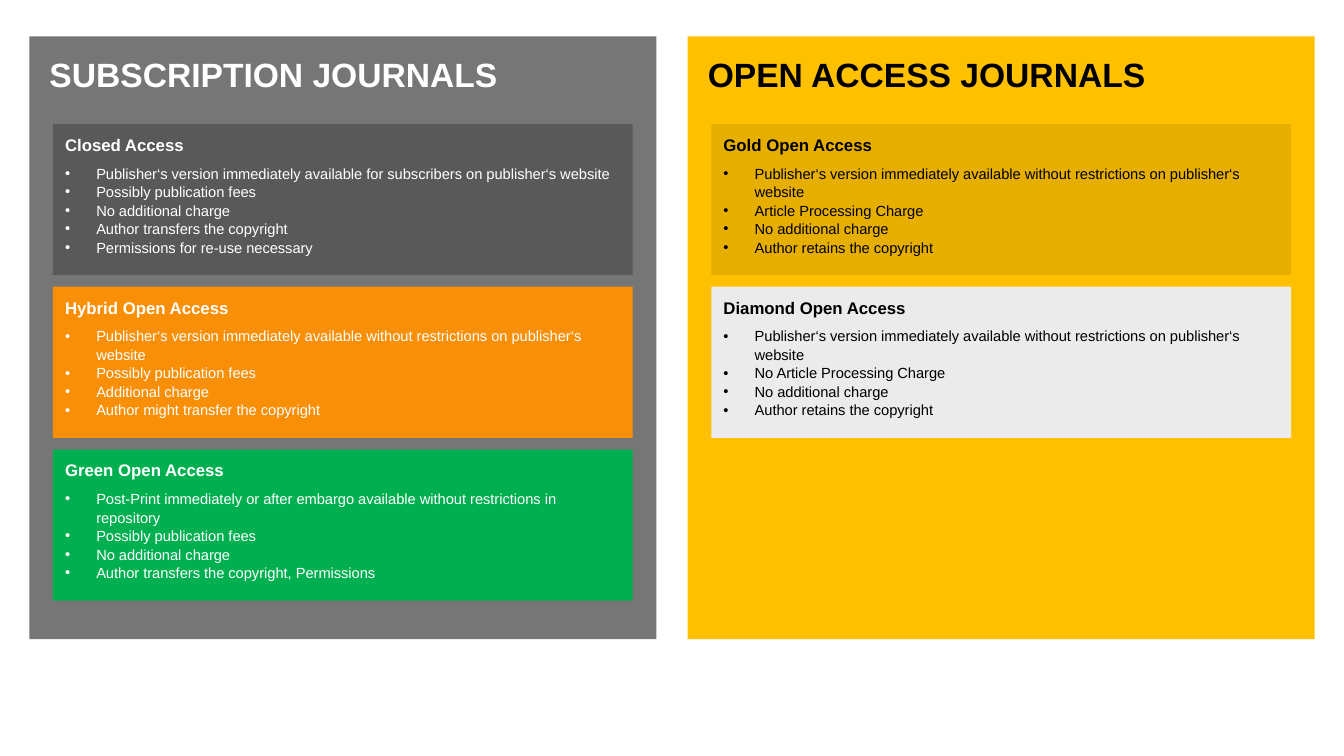
"""Compare subscription and open access journals in two panels of cards."""
from pptx import Presentation
from pptx.dml.color import RGBColor as RGB
from pptx.enum.shapes import MSO_SHAPE as Shape
from pptx.enum.text import MSO_ANCHOR as Anchor, PP_ALIGN as Align
from pptx.oxml.ns import qn
from pptx.util import Inches, Pt
from lxml.etree import SubElement

HUES = {
    "white": "FFFFFF", "black": "000000", "gray": "767676", "yellow": "FFC000",
    "dark": "595959", "orange": "F88F07", "green": "00B050",
    "gold": "E6AF00", "pale": "EBEBEB",
}
LEFT, TOP, WIDE, HIGH = 0.29, 0.36, 6.22, 5.98
STEP = 6.53
INSET, FIRST, CARD_W, CARD_H, PITCH = 0.235, 1.23, 5.75, 1.5, 1.615
INDENT = 0.31
FREE = ("Publisher‘s version immediately available without restrictions "
        "on publisher‘s website")

PANELS = [
    ("SUBSCRIPTION JOURNALS", "gray", "white", [
        ("Closed Access", "dark", [
            "Publisher‘s version immediately available for subscribers "
            "on publisher‘s website",
            "Possibly publication fees",
            "No additional charge",
            "Author transfers the copyright",
            "Permissions for re-use necessary"]),
        ("Hybrid Open Access", "orange", [
            FREE,
            "Possibly publication fees",
            "Additional charge",
            "Author might transfer the copyright"]),
        ("Green Open Access", "green", [
            "Post-Print immediately or after embargo available "
            "without restrictions in repository",
            "Possibly publication fees",
            "No additional charge",
            "Author transfers the copyright, Permissions"]),
    ]),
    ("OPEN ACCESS JOURNALS", "yellow", "black", [
        ("Gold Open Access", "gold", [
            FREE,
            "Article Processing Charge",
            "No additional charge",
            "Author retains the copyright"]),
        ("Diamond Open Access", "pale", [
            FREE,
            "No Article Processing Charge",
            "No additional charge",
            "Author retains the copyright"]),
    ]),
]


def add_box(x, y, wide, high, fill, pad):
    box = slide.shapes.add_shape(
        Shape.RECTANGLE, Inches(x), Inches(y), Inches(wide), Inches(high))
    box.shadow.inherit = False
    box.fill.solid()
    box.fill.fore_color.rgb = RGB.from_string(HUES[fill])
    box.line.fill.background()
    frame = box.text_frame
    frame.word_wrap = True
    frame.vertical_anchor = Anchor.TOP
    frame.margin_left = frame.margin_right = frame.margin_top = Inches(pad)
    frame.margin_bottom = Inches(0.05)
    return frame


def style(para, size, bold, ink, space):
    para.alignment = Align.LEFT
    para.line_spacing = space
    for run in para.runs:
        run.font.name = "Arial"
        run.font.size = Pt(size)
        run.font.bold = bold
        run.font.color.rgb = RGB.from_string(HUES[ink])


deck = Presentation()
deck.slide_width, deck.slide_height = Inches(13.33), Inches(7.5)
slide = deck.slides.add_slide(deck.slide_layouts[6])

for col, (title, back, ink, cards) in enumerate(PANELS):
    x = LEFT + col * STEP
    frame = add_box(x, TOP, WIDE, HIGH, back, 0.2)
    frame.text = title
    style(frame.paragraphs[0], 24, True, ink, 0.95)

    for row, (name, fill, points) in enumerate(cards):
        frame = add_box(x + INSET, FIRST + row * PITCH, CARD_W, CARD_H, fill, 0.12)
        frame.text = "\n".join([name, *points])
        head, *items = frame.paragraphs
        style(head, 12, True, ink, 0.95)
        head.space_after = Pt(6)
        for item in items:
            style(item, 10.5, False, ink, 1.05)
            props = item._p.get_or_add_pPr()
            props.set("marL", str(Inches(INDENT)))
            props.set("indent", str(-Inches(INDENT)))
            SubElement(props, qn("a:buFont"), typeface="Arial")
            SubElement(props, qn("a:buChar"), char="•")

deck.save("out.pptx")
